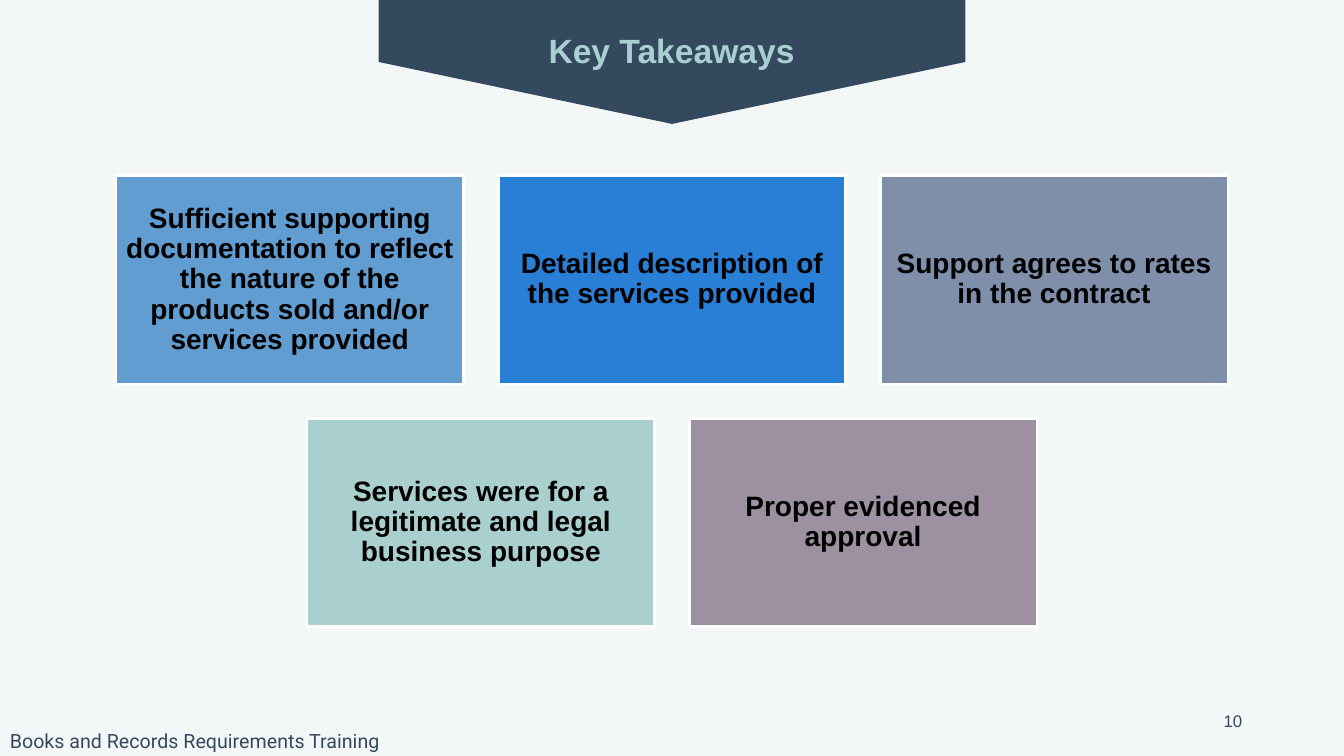
from dataclasses import dataclass

from pptx import Presentation
from pptx.dml.color import RGBColor
from pptx.enum.shapes import MSO_SHAPE as Shape
from pptx.enum.text import MSO_ANCHOR as Anchor, PP_ALIGN as Align
from pptx.util import Inches, Pt

SLIDE_WIDTH, SLIDE_HEIGHT = 13.33, 7.5
CARD_WIDTH, CARD_HEIGHT, CARD_GAP = 3.45, 2.07, 0.34
CARDS_TOP = 1.74
CARD_INSET = 0.08
BANNER_WIDTH, BANNER_HEIGHT = 5.82, 1.23


@dataclass(frozen=True)
class Theme:
    background: str = "F4F7F7"
    navy: str = "34495E"
    mint: str = "AACFD0"
    card_text: str = "000000"
    card_border: str = "FFFFFF"
    font: str = "Arial"
    footer_font: str = "Roboto"
    title_size: int = 24
    card_size: int = 20
    footer_size: int = 14
    number_size: int = 12


THEME = Theme()

CARD_ROWS = [
    [
        ("Sufficient supporting documentation to reflect the nature of the "
         "products sold and/or services provided", "629DD1"),
        ("Detailed description of the services provided", "297FD5"),
        ("Support agrees to rates in the contract", "7F8FA9"),
    ],
    [
        ("Services were for a legitimate and legal business purpose", "AACFCF"),
        ("Proper evidenced approval", "9D90A0"),
    ],
]


def paint(fill, color):
    fill.solid()
    fill.fore_color.rgb = RGBColor.from_string(color)


def write(shape, text, size, color, font=THEME.font, bold=False,
          align=Align.LEFT, anchor=Anchor.TOP):
    frame = shape.text_frame
    frame.word_wrap = True
    frame.vertical_anchor = anchor
    frame.text = text
    paragraph = frame.paragraphs[0]
    paragraph.alignment = align
    for run in paragraph.runs:
        run.font.name = font
        run.font.size = Pt(size)
        run.font.bold = bold
        run.font.color.rgb = RGBColor.from_string(color)
    return paragraph


def add_label(slide, left, top, width, height, text, size, color, **style):
    label = slide.shapes.add_textbox(*map(Inches, (left, top, width, height)))
    write(label, text, size, color, **style)


def add_banner(slide):
    """Add a pentagon turned to point down, flush with the slide's top edge."""
    left = (SLIDE_WIDTH - BANNER_HEIGHT) / 2
    top = (BANNER_HEIGHT - BANNER_WIDTH) / 2
    banner = slide.shapes.add_shape(
        Shape.PENTAGON, *map(Inches, (left, top, BANNER_HEIGHT, BANNER_WIDTH)))
    banner.rotation = 90
    banner.shadow.inherit = False
    paint(banner.fill, THEME.navy)
    banner.line.fill.background()


def add_card(group, left, top, text, color):
    card = group.shapes.add_shape(
        Shape.RECTANGLE, *map(Inches, (left, top, CARD_WIDTH, CARD_HEIGHT)))
    card.shadow.inherit = False
    paint(card.fill, color)
    paint(card.line.fill, THEME.card_border)
    card.line.width = Pt(2)
    frame = card.text_frame
    frame.margin_left = frame.margin_right = Inches(CARD_INSET)
    frame.margin_top = frame.margin_bottom = Inches(CARD_INSET)
    paragraph = write(card, text, THEME.card_size, THEME.card_text, bold=True,
                      align=Align.CENTER, anchor=Anchor.MIDDLE)
    paragraph.line_spacing = 0.9


def add_card_rows(slide):
    """Lay out each row of cards centred on the slide."""
    group = slide.shapes.add_group_shape()
    for row, cards in enumerate(CARD_ROWS):
        row_width = len(cards) * (CARD_WIDTH + CARD_GAP) - CARD_GAP
        row_left = (SLIDE_WIDTH - row_width) / 2
        top = CARDS_TOP + row * (CARD_HEIGHT + CARD_GAP)
        for column, (text, color) in enumerate(cards):
            left = row_left + column * (CARD_WIDTH + CARD_GAP)
            add_card(group, left, top, text, color)


def main():
    presentation = Presentation()
    presentation.slide_width = Inches(SLIDE_WIDTH)
    presentation.slide_height = Inches(SLIDE_HEIGHT)
    slide = presentation.slides.add_slide(presentation.slide_layouts[6])
    paint(slide.background.fill, THEME.background)

    add_label(slide, 0, 7.18, 4.17, 0.34, "Books and Records Requirements Training",
              THEME.footer_size, THEME.navy, font=THEME.footer_font)
    add_banner(slide)
    add_label(slide, 2.97, 0.25, 7.38, 0.5, "Key Takeaways",
              THEME.title_size, THEME.mint, bold=True, align=Align.CENTER)
    add_label(slide, 9.42, 6.95, 3, 0.4, "10", THEME.number_size, THEME.navy,
              align=Align.RIGHT, anchor=Anchor.MIDDLE)
    add_card_rows(slide)
    presentation.save("out.pptx")


if __name__ == "__main__":
    main()
